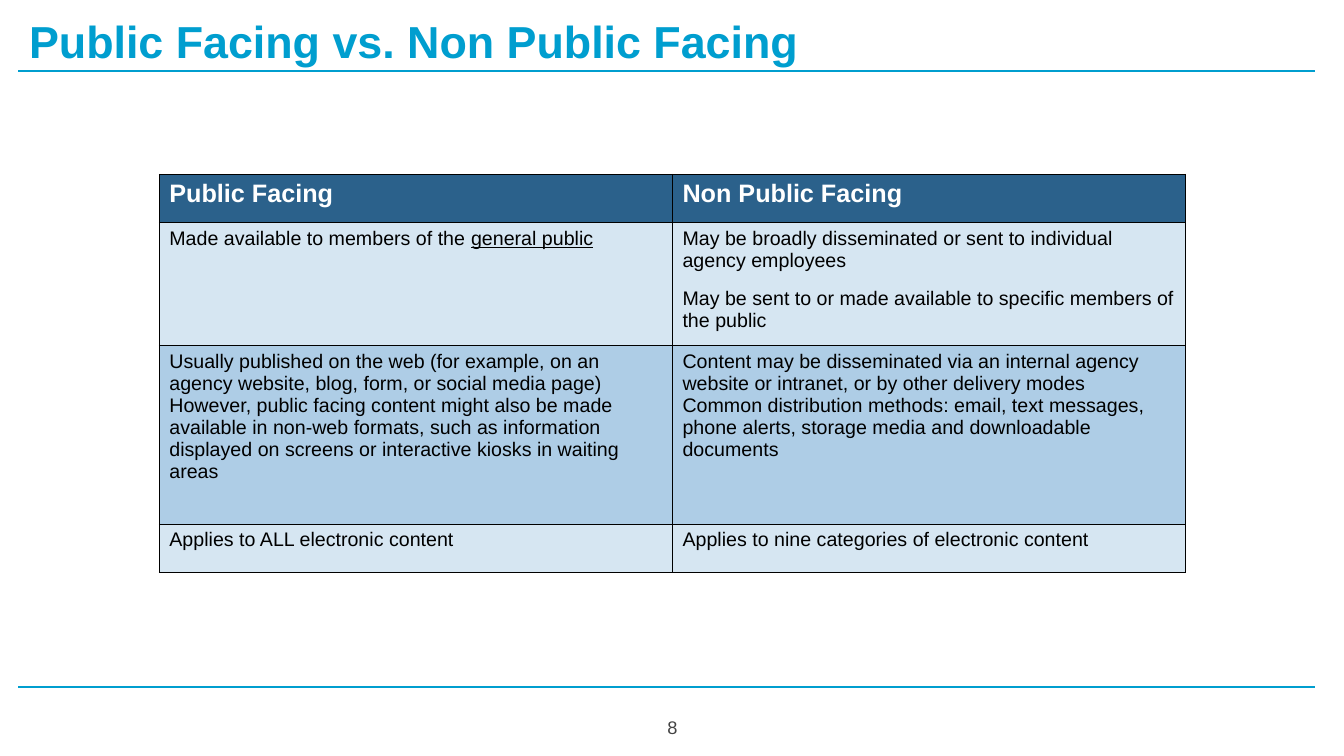
from lxml.etree import SubElement
from pptx import Presentation
from pptx.dml.color import RGBColor
from pptx.enum.shapes import MSO_CONNECTOR
from pptx.enum.text import MSO_ANCHOR, PP_ALIGN
from pptx.oxml.ns import qn
from pptx.util import Inches, Pt

CYAN = RGBColor(0x00, 0x9E, 0xCF)
NAVY = RGBColor(0x2B, 0x61, 0x8B)
PALE_BLUE = RGBColor(0xD6, 0xE6, 0xF2)
MID_BLUE = RGBColor(0xAE, 0xCD, 0xE6)
WHITE = RGBColor(0xFF, 0xFF, 0xFF)
BLACK = RGBColor(0x00, 0x00, 0x00)
GREY = RGBColor(0x43, 0x43, 0x43)

ROW_HEIGHTS = (0.48, 1.22, 1.77, 0.48)
ROW_FILLS = (NAVY, PALE_BLUE, MID_BLUE, PALE_BLUE)
# Each cell is a list of paragraphs; a tuple holds plain text, then underlined text.
COMPARISON = (
    (["Public Facing"], ["Non Public Facing"]),
    (
        [("Made available to members of the ", "general public")],
        ["May be broadly disseminated or sent to individual agency employees",
         "May be sent to or made available to specific members of the public"],
    ),
    (
        ["Usually published on the web (for example, on an agency website, blog, "
         "form, or social media page)",
         "However, public facing content might also be made available in non-web "
         "formats, such as information displayed on screens or interactive kiosks "
         "in waiting areas"],
        ["Content may be disseminated via an internal agency website or intranet, "
         "or by other delivery modes",
         "Common distribution methods: email, text messages, phone alerts, storage "
         "media and downloadable documents"],
    ),
    (["Applies to ALL electronic content"],
     ["Applies to nine categories of electronic content"]),
)


def write(frame, paragraphs, size, color, bold=False, align=PP_ALIGN.LEFT, gap=0):
    """Fill a text frame, with gap points between its paragraphs."""
    frame.word_wrap = True
    for index, content in enumerate(paragraphs):
        paragraph = frame.paragraphs[0] if index == 0 else frame.add_paragraph()
        paragraph.alignment = align
        if index:
            paragraph.space_before = Pt(gap)
        pieces = (content,) if isinstance(content, str) else content
        for position, piece in enumerate(pieces):
            run = paragraph.add_run()
            run.text = piece
            run.font.name = "Arial"
            run.font.size = Pt(size)
            run.font.bold = bold
            run.font.color.rgb = color
            if position:
                run.font.underline = True


def add_label(slide, text, left, top, width, height, inset_top=0.1,
              anchor=MSO_ANCHOR.TOP, **text_format):
    box = slide.shapes.add_textbox(Inches(left), Inches(top), Inches(width), Inches(height))
    frame = box.text_frame
    frame.margin_left = frame.margin_right = frame.margin_bottom = Inches(0.1)
    frame.margin_top = Inches(inset_top)
    frame.vertical_anchor = anchor
    write(frame, [text], **text_format)


def add_rule(slide, left, top, width):
    rule = slide.shapes.add_connector(
        MSO_CONNECTOR.STRAIGHT, Inches(left), Inches(top), Inches(left + width), Inches(top))
    rule.line.color.rgb = CYAN
    rule.line.width = Pt(1.5)
    SubElement(rule.element.spPr, qn("a:effectLst"))


def add_header(slide, left, top, width, height):
    add_rule(slide, left, top + height, width)
    add_label(slide, "Public Facing vs. Non Public Facing", left + 0.01, top, 11, height,
              inset_top=0.14, size=32, color=CYAN, bold=True)


def add_footer(slide, left, top, width, height):
    add_rule(slide, left, top, width)
    number_width = 0.6
    add_label(slide, "8", left + (width - number_width) / 2 + 0.06, top + 0.11,
              number_width, height - 0.11, anchor=MSO_ANCHOR.MIDDLE,
              size=13, color=GREY, align=PP_ALIGN.CENTER)


def add_borders(cell):
    properties = cell._tc.get_or_add_tcPr()
    for position, side in enumerate(("lnL", "lnR", "lnT", "lnB")):
        border = SubElement(properties, qn(f"a:{side}"), w=str(Pt(0.75)))
        fill = SubElement(border, qn("a:solidFill"))
        SubElement(fill, qn("a:srgbClr"), val=str(BLACK))
        properties.insert(position, border)


def add_comparison(slide, left, top, width):
    table = slide.shapes.add_table(
        len(COMPARISON), 2, Inches(left), Inches(top), Inches(width),
        Inches(sum(ROW_HEIGHTS))).table
    for column in table.columns:
        column.width = Inches(width / 2)
    for row, height in zip(table.rows, ROW_HEIGHTS):
        row.height = Inches(height)
    for row_index, (contents, fill) in enumerate(zip(COMPARISON, ROW_FILLS)):
        heading = row_index == 0
        for column_index, paragraphs in enumerate(contents):
            cell = table.cell(row_index, column_index)
            cell.fill.solid()
            cell.fill.fore_color.rgb = fill
            add_borders(cell)
            write(cell.text_frame, paragraphs, size=18 if heading else 14,
                  color=WHITE if heading else BLACK, bold=heading,
                  gap=11.5 if row_index == 1 else 0)


def main():
    deck = Presentation()
    deck.slide_width, deck.slide_height = Inches(13.33), Inches(7.5)
    slide = deck.slides.add_slide(deck.slide_layouts[6])
    add_header(slide, 0.18, 0, 12.86, 0.7)
    add_comparison(slide, 1.58, 1.73, 10.18)
    add_footer(slide, 0.18, 6.82, 12.86, 0.68)
    deck.save("out.pptx")


if __name__ == "__main__":
    main()
